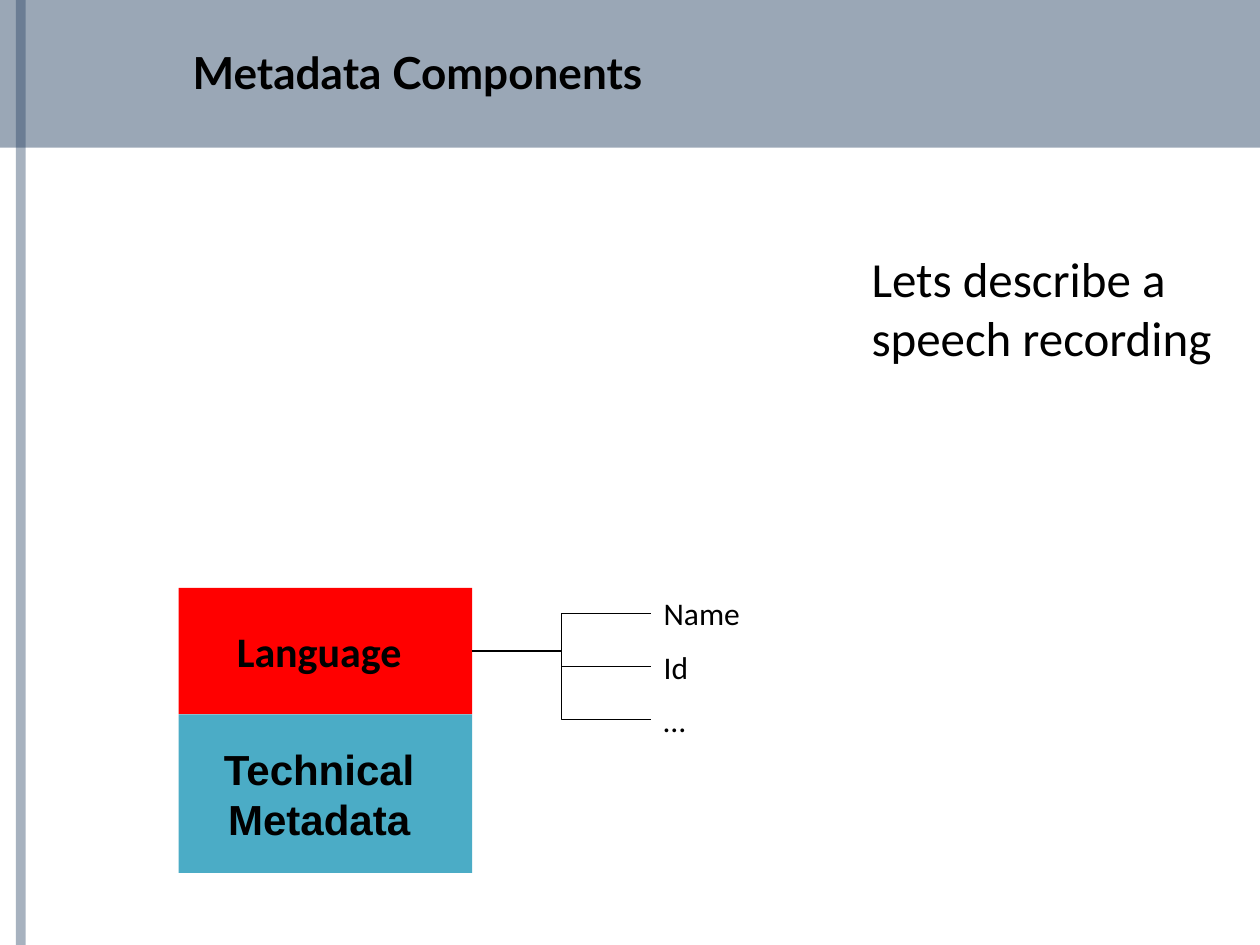
import lxml.etree
import pptx
import pptx.dml.color
import pptx.enum.shapes
import pptx.enum.text
import pptx.oxml.ns
import pptx.util

Cm = pptx.util.Cm
Pt = pptx.util.Pt
ALIGN = pptx.enum.text.PP_ALIGN
MIDDLE = pptx.enum.text.MSO_ANCHOR.MIDDLE
RECT = pptx.enum.shapes.MSO_SHAPE.RECTANGLE
ELBOW = pptx.enum.shapes.MSO_CONNECTOR.ELBOW
LEFT_SITE, RIGHT_SITE = 1, 3


def paint(color, code):
    color.rgb = pptx.dml.color.RGBColor.from_string(code)


def add_tag(parent, tag, **attrs):
    return lxml.etree.SubElement(parent, pptx.oxml.ns.qn(tag), attrs)


def write(shape, lines, size, font="Calibri", bold=False, align=ALIGN.LEFT):
    frame = shape.text_frame
    frame.text = "\n".join(lines)
    for para in frame.paragraphs:
        para.alignment = align
        para.font.name = font
        para.font.size = Pt(size)
        para.font.bold = bold
        paint(para.font.color, "000000")


def add_rect(slide, left, top, width, height, fill):
    rect = slide.shapes.add_shape(RECT, Cm(left), Cm(top), Cm(width), Cm(height))
    rect.shadow.inherit = False
    rect.fill.solid()
    paint(rect.fill.fore_color, fill)
    rect.line.fill.background()
    return rect


def add_band(slide, left, width, height, alpha):
    """Draw a see-through band from the top edge; alpha is in percent."""
    band = add_rect(slide, left, 0, width, height, "254061")
    color = band.element.spPr.find(".//" + pptx.oxml.ns.qn("a:srgbClr"))
    add_tag(color, "a:alpha", val=str(alpha * 1000))


def set_title(slide, text):
    title = slide.shapes.title
    title.left, title.top = Cm(3.63), Cm(0.76)
    title.width, title.height = Cm(17.8), Cm(1.37)
    title.text_frame.vertical_anchor = MIDDLE
    write(title, [text], 25.2, "Lato", True)
    # The bands must lie behind the title.
    title.element.getparent().append(title.element)


def add_block(slide, top, lines, fill, font):
    block = add_rect(slide, 3.6, top, 5.92, 3.2, fill)
    block.text_frame.margin_left = 0
    block.text_frame.vertical_anchor = MIDDLE
    write(block, lines, 24, font, True, ALIGN.CENTER)
    return block


def add_text(slide, left, top, width, height, lines, size):
    box = slide.shapes.add_textbox(Cm(left), Cm(top), Cm(width), Cm(height))
    box.text_frame.word_wrap = False
    write(box, lines, size)
    return box


def link(slide, block, label):
    line = slide.shapes.add_connector(ELBOW, 0, 0, 0, 0)
    line.begin_connect(block, RIGHT_SITE)
    line.end_connect(label, LEFT_SITE)
    line.line.width = Pt(0.75)
    paint(line.line.color, "000000")
    add_tag(line.element.spPr, "a:effectLst")


def main():
    deck = pptx.Presentation()
    deck.slide_width, deck.slide_height = Cm(25.4), Cm(19.05)
    slide = deck.slides.add_slide(deck.slide_layouts[5])

    add_band(slide, 0, 25.4, 2.98, 46)
    add_band(slide, 0.32, 0.2, 19.05, 40)
    set_title(slide, "Metadata Components")

    block = add_block(slide, 11.85, ["Language"], "FF0000", "Calibri")
    add_block(slide, 14.4 + 0.0, ["Technical", "Metadata"], "4BACC6", "Arial")
    block.height = Cm(2.55)

    fields = [("Name", 2.24), ("Id", 1.04), ("…", 1.14)]
    for row, (name, width) in enumerate(fields):
        label = add_text(slide, 13.13, 11.86 + 1.07 * row, width, 1.02, [name], 18)
        link(slide, block, label)

    add_text(slide, 17.32, 4.88, 8.15, 2.64,
             ["Lets describe a", "speech recording"], 28)
    deck.save("out.pptx")


if __name__ == "__main__":
    main()
